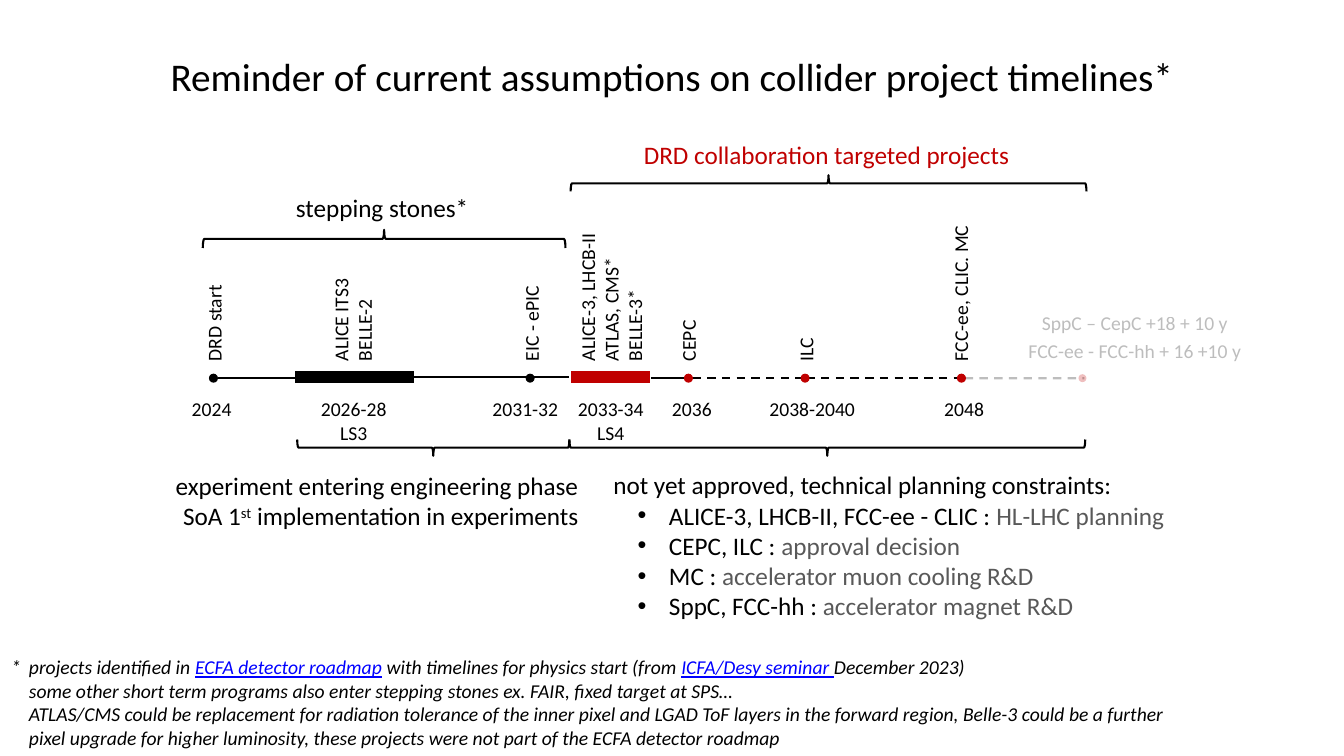
from dataclasses import dataclass

from lxml import etree
from pptx import Presentation
from pptx.dml.color import RGBColor
from pptx.enum.dml import MSO_LINE
from pptx.enum.shapes import MSO_CONNECTOR, MSO_SHAPE
from pptx.enum.text import PP_ALIGN
from pptx.oxml.ns import qn
from pptx.util import Cm, Pt

LEFT, CENTER, RIGHT = PP_ALIGN.LEFT, PP_ALIGN.CENTER, PP_ALIGN.RIGHT
DASH = MSO_LINE.DASH
STRAIGHT = MSO_CONNECTOR.STRAIGHT
OVAL, BRACE = MSO_SHAPE.OVAL, MSO_SHAPE.LEFT_BRACE


@dataclass(frozen=True)
class Theme:
    font: str = "Calibri"
    black: RGBColor = RGBColor(0x00, 0x00, 0x00)
    red: RGBColor = RGBColor(0xC0, 0x00, 0x00)
    gray: RGBColor = RGBColor(0x59, 0x59, 0x59)
    blue: RGBColor = RGBColor(0x00, 0x00, 0xFF)
    title: int = 28
    heading: int = 18
    label: int = 14


theme = Theme()
prs = Presentation()
prs.slide_width, prs.slide_height = Cm(33.87), Cm(19.05)
slide = prs.slides.add_slide(prs.slide_layouts[6])
shapes = slide.shapes


def fade(element):
    """Make every solid colour inside the element 25 % opaque."""
    for color in element.iter(qn("a:srgbClr")):
        etree.SubElement(color, qn("a:alpha")).set("val", "25000")


def add_text(box, paragraphs, size=theme.label, color=theme.black, align=LEFT,
             italic=False, wrap=True, rotation=0, space_after=0, indents=None):
    """Runs are strings or (string, format); indents are (margin, first line, bullet)."""
    text_box = shapes.add_textbox(*(Cm(value) for value in box))
    text_box.rotation = rotation
    frame = text_box.text_frame
    frame.word_wrap = wrap
    for index, runs in enumerate(paragraphs):
        paragraph = frame.paragraphs[0] if index == 0 else frame.add_paragraph()
        paragraph.alignment = align
        paragraph.space_after = Pt(space_after)
        if indents:
            margin, first_line, bullet = indents[index]
            properties = paragraph._p.get_or_add_pPr()
            properties.set("marL", str(Cm(margin)))
            properties.set("indent", str(Cm(first_line)))
            if bullet:
                etree.SubElement(properties, qn("a:buFont")).set("typeface", "Arial")
                etree.SubElement(properties, qn("a:buChar")).set("char", bullet)
        for item in [runs] if isinstance(runs, str) else runs:
            content, style = (item, {}) if isinstance(item, str) else item
            run = paragraph.add_run()
            run.text = content
            run.font.name, run.font.size = theme.font, Pt(size)
            run.font.italic = italic
            run.font.color.rgb = style.get("color", color)
            if style.get("underline"):
                run.font.underline = True
            if style.get("superscript"):
                run._r.get_or_add_rPr().set("baseline", "30000")
    return text_box


add_text((1.32, 1.19, 31.22, 1.45),
         ["Reminder of current assumptions on collider project timelines*"],
         size=theme.title, align=CENTER)

# Timeline segments: start, end, height, colour, weight, dashed, faded
LINE_Y, BAR_Y = 9.53, 9.5
segments = [
    (7.44, 10.44, BAR_Y, theme.black, 8, False, False),
    (14.4, 16.38, BAR_Y, theme.red, 8, False, False),
    (5.49, 7.49, LINE_Y, theme.black, 1.5, False, False),
    (10.44, 14.35, BAR_Y, theme.black, 1.5, False, False),
    (16.41, 17.4, LINE_Y, theme.black, 1.5, False, False),
    (17.45, 20.32, LINE_Y, theme.black, 1.5, True, False),
    (20.32, 24.31, LINE_Y, theme.black, 1.5, True, False),
    (24.31, 27.33, LINE_Y, theme.black, 1.5, True, True),
]
for start, end, y, color, weight, dashed, faded in segments:
    segment = shapes.add_connector(STRAIGHT, Cm(start), Cm(y), Cm(end), Cm(y))
    segment.line.color.rgb = color
    segment.line.width = Pt(weight)
    if dashed:
        segment.line.dash_style = DASH
    if faded:
        fade(segment._element.spPr)
    etree.SubElement(segment._element.spPr, qn("a:effectLst"))

DOT = 0.2
milestones = [(5.38, theme.black, False), (13.36, theme.black, False),
              (17.35, theme.red, False), (20.29, theme.red, False),
              (24.23, theme.red, False), (27.28, theme.red, True)]
for x, color, faded in milestones:
    dot = shapes.add_shape(OVAL, Cm(x - DOT / 2), Cm(LINE_Y - DOT / 2), Cm(DOT), Cm(DOT))
    dot.shadow.inherit = False
    dot.fill.solid()
    dot.fill.fore_color.rgb = color
    if faded:
        dot.line.fill.background()
        fade(dot._element.spPr)
    else:
        dot.line.color.rgb = color
        dot.line.width = Pt(0.75)

# Upright project names, all starting just above the timeline: centre, length, lines
NAMES_BOTTOM = 9.35
projects = [
    (5.4, 3.48, ["DRD start"]),
    (8.89, 3.35, ["ALICE ITS3", "BELLE-2"]),
    (13.39, 3.35, ["EIC - ePIC"]),
    (15.41, 6.27, ["ALICE-3, LHCB-II", "ATLAS, CMS*", "BELLE-3*"]),
    (17.35, 2.59, ["CEPC"]),
    (20.31, 1.45, ["ILC"]),
    (24.21, 4.67, ["FCC-ee, CLIC. MC"]),
]
for x, length, names in projects:
    depth = 0.26 + 0.6 * len(names)
    add_text((x - length / 2, NAMES_BOTTOM - length / 2 - depth / 2, length, depth),
             names, rotation=270)

dates = [
    (4.27, 2.13, ["2024"], CENTER),
    (7.34, 3.15, ["2026-28", "LS3"], CENTER),
    (11.91, 2.41, ["2031-32"], RIGHT),
    (13.82, 3.15, ["2033-34", "LS4"], CENTER),
    (16.51, 1.68, ["2036"], RIGHT),
    (18.8, 3, ["2038-2040"], RIGHT),
    (23.37, 1.68, ["2048"], RIGHT),
]
for left, width, lines, align in dates:
    add_text((left, 9.88, width, 0.26 + 0.6 * len(lines)), lines,
             align=align, wrap=align == CENTER)

far_future = add_text((25.07, 7.72, 7.06, 1.55),
                      ["SppC – CepC +18 + 10 y", "FCC-ee - FCC-hh + 16 +10 y"],
                      align=CENTER, space_after=3)
fade(far_future._element)

# Braces: centre x, centre y, length, depth, rotation (90 points up, 270 down)
braces = [(9.68, 6.02, 9.14, 0.46, 90), (20.88, 4.62, 13, 0.41, 90),
          (10.92, 11.28, 6.86, 0.41, 270), (20.85, 11.28, 13, 0.41, 270)]
for x, y, length, depth, rotation in braces:
    brace = shapes.add_shape(BRACE, Cm(x - depth / 2), Cm(y - length / 2),
                             Cm(depth), Cm(length))
    brace.rotation = rotation
    brace.adjustments[0] = 0.083
    brace.shadow.inherit = False
    brace.fill.background()
    brace.line.color.rgb = theme.black
    brace.line.width = Pt(1.5)

add_text((4.6, 4.72, 10.06, 1.02), ["stepping stones*"],
         size=theme.heading, align=CENTER)
add_text((14.43, 3.38, 12.8, 1.02), ["DRD collaboration targeted projects"],
         size=theme.heading, color=theme.red, align=CENTER)
add_text((2.03, 11.73, 12.8, 1.8),
         ["experiment entering engineering phase",
          ["SoA 1", ("st", {"superscript": True}), " implementation in experiments"]],
         size=theme.heading, align=RIGHT)

constraints = [
    ("ALICE-3, LHCB-II, FCC-ee - CLIC : ", "HL-LHC planning"),
    ("CEPC, ILC : ", "approval decision"),
    ("MC : ", "accelerator muon cooling R&D"),
    ("SppC, FCC-hh : ", "accelerator magnet R&D"),
]
add_text((15.21, 11.71, 17.32, 4.11),
         ["not yet approved, technical planning constraints:"]
         + [[project, (reason, {"color": theme.gray})] for project, reason in constraints],
         size=theme.heading,
         indents=[(0, 0, None)] + [(1.4, -0.79, "•")] * len(constraints))

reference = {"color": theme.blue, "underline": True}
footnote = [
    ["*\tprojects identified in ", ("ECFA detector roadmap", reference),
     " with timelines for physics start (from ", ("ICFA/Desy seminar ", reference),
     "December 2023)"],
    "some other short term programs also enter stepping stones ex. FAIR, "
    "fixed target at SPS…",
    "ATLAS/CMS could be replacement for radiation tolerance of the inner pixel and "
    "LGAD ToF layers in the forward region, Belle-3 could be a further",
    "pixel upgrade for higher luminosity, these projects were not part of the "
    "ECFA detector roadmap",
]
add_text((0.03, 16.38, 33.84, 2.64), footnote, italic=True,
         indents=[(0.45, -0.45, None)] + [(0.45, 0, None)] * (len(footnote) - 1))

prs.save("out.pptx")
